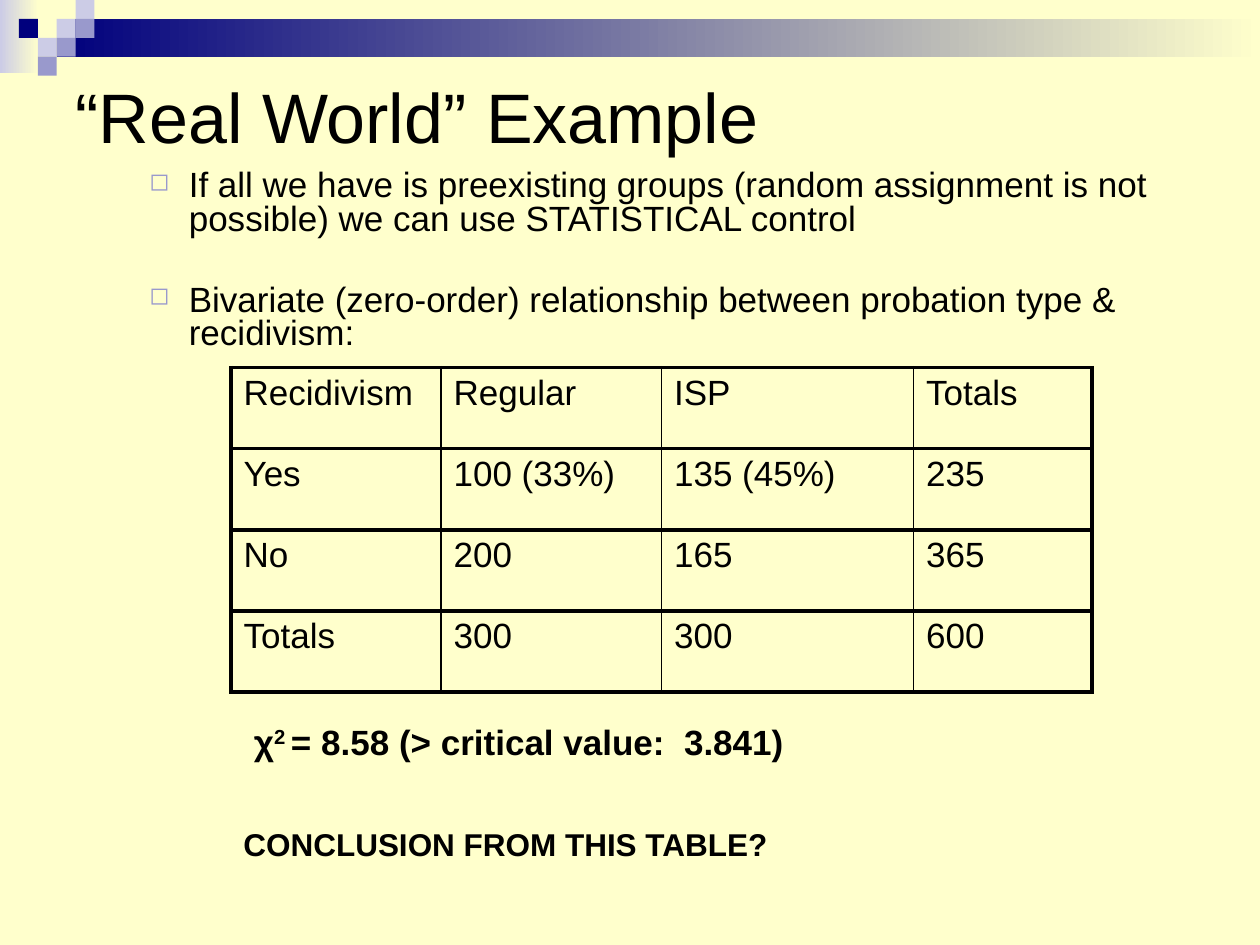
from lxml.etree import SubElement
from pptx import Presentation
from pptx.dml.color import RGBColor
from pptx.enum.shapes import MSO_SHAPE
from pptx.enum.text import MSO_ANCHOR, PP_ALIGN
from pptx.oxml.ns import qn
from pptx.util import Pt

CREAM = RGBColor(0xFF, 0xFF, 0xCC)
NAVY = RGBColor(0x00, 0x00, 0x7D)
LILAC = RGBColor(0xCC, 0xCC, 0xE6)
PURPLE = RGBColor(0x99, 0x99, 0xCC)
BLACK = RGBColor(0, 0, 0)

UNIT = 10.8  # side of one decorative square
SQUARES = [(3, 1, LILAC), (4, 0, LILAC), (4, 1, PURPLE), (2, 2, LILAC),
           (1, 1, NAVY), (3, 2, PURPLE), (2, 3, PURPLE)]
BULLETS = [
    "If all we have is preexisting groups (random assignment is not possible) "
    "we can use STATISTICAL control",
    "Bivariate (zero-order) relationship between probation type & recidivism:",
]
ROWS = [
    ["Recidivism", "Regular", "ISP", "Totals"],
    ["Yes", "100 (33%)", "135 (45%)", "235"],
    ["No", "200", "165", "365"],
    ["Totals", "300", "300", "600"],
]


def add_run(p, text, size=20, bold=False, baseline=0):
    r = p.add_run()
    r.text = text
    r.font.name = "Arial"
    r.font.size = Pt(size)
    r.font.bold = bold
    r.font.color.rgb = BLACK
    if baseline:
        r.font._element.set("baseline", str(baseline * 1000))


def add_bullet(p):
    """Give the paragraph a hanging, small purple square."""
    pPr = p._p.get_or_add_pPr()
    pPr.set("marL", str(Pt(59)))
    pPr.set("indent", str(Pt(-22.5)))
    color = SubElement(pPr, qn("a:buClr"))
    SubElement(color, qn("a:srgbClr"), val=str(PURPLE))
    SubElement(pPr, qn("a:buSzPct"), val="70000")
    SubElement(pPr, qn("a:buChar"), char="◻")


def add_borders(cell, **widths):
    tcPr = cell._tc.get_or_add_tcPr()
    for side, width in widths.items():
        ln = SubElement(tcPr, qn(f"a:ln{side}"), w=str(Pt(width)))
        fill = SubElement(ln, qn("a:solidFill"))
        SubElement(fill, qn("a:srgbClr"), val=str(BLACK))


class Deck:
    def __init__(self, prs):
        self.s = prs.slides.add_slide(prs.slide_layouts[5])
        self.s.background.fill.solid()
        self.s.background.fill.fore_color.rgb = CREAM

    def rect(self, x, y, w, h, color, fade_to=None):
        sp = self.s.shapes.add_shape(MSO_SHAPE.RECTANGLE, Pt(x), Pt(y), Pt(w), Pt(h))
        sp.shadow.inherit = False
        sp.line.fill.background()
        if fade_to is None:
            sp.fill.solid()
            sp.fill.fore_color.rgb = color
            return
        sp.fill.gradient()
        sp.fill.gradient_angle = 0
        for stop, stop_color in zip(sp.fill.gradient_stops, (color, fade_to)):
            stop.color.rgb = stop_color

    def title(self, text, x, y, w, h):
        sp = self.s.shapes.title
        sp.left, sp.top, sp.width, sp.height = Pt(x), Pt(y), Pt(w), Pt(h)
        tf = sp.text_frame
        tf.vertical_anchor = MSO_ANCHOR.MIDDLE
        tf.paragraphs[0].alignment = PP_ALIGN.LEFT
        add_run(tf.paragraphs[0], text, size=40)

    def text_box(self, x, y, w, h, wrap=True):
        tf = self.s.shapes.add_textbox(Pt(x), Pt(y), Pt(w), Pt(h)).text_frame
        tf.word_wrap = wrap
        return tf

    def bullets(self, items, x, y, w, h):
        tf = self.text_box(x, y, w, h)
        for i, item in enumerate(items):
            p = tf.paragraphs[0] if i == 0 else tf.add_paragraph()
            p.line_spacing = 0.8
            p.space_before = Pt(27 if i else 0)
            add_bullet(p)
            add_run(p, item)

    def table(self, rows, x, y, col_widths, row_height):
        table = self.s.shapes.add_table(
            len(rows), len(col_widths), Pt(x), Pt(y),
            Pt(sum(col_widths)), Pt(row_height * len(rows))).table
        table.first_row = table.horz_banding = False
        for col, width in zip(table.columns, col_widths):
            col.width = Pt(width)
        last = len(col_widths) - 1
        for i, values in enumerate(rows):
            table.rows[i].height = Pt(row_height)
            for j, value in enumerate(values):
                cell = table.cell(i, j)
                add_borders(cell, L=2.25 if j == 0 else 1,
                            R=2.25 if j == last else 1, T=2.25, B=2.25)
                cell.fill.background()
                add_run(cell.text_frame.paragraphs[0], value)


def main():
    prs = Presentation()
    prs.slide_width, prs.slide_height = Pt(720), Pt(540)
    deck = Deck(prs)

    deck.rect(0, 0, 22.3, 41.8, LILAC, fade_to=CREAM)
    deck.rect(3 * UNIT, UNIT, 720 - 3 * UNIT, 2 * UNIT, NAVY, fade_to=CREAM)
    for col, row, color in SQUARES:
        deck.rect(col * UNIT, row * UNIT, UNIT, UNIT, color)

    deck.title("“Real World” Example", 36, 36, 648, 60.5)
    deck.bullets(BULLETS, 41.8, 94, 630, 110)
    deck.table(ROWS, 132, 210, [120, 126, 144, 102], 46.4)

    p = deck.text_box(138, 408, 416, 31).paragraphs[0]
    add_run(p, "χ", bold=True)
    add_run(p, "2 ", bold=True, baseline=30)
    add_run(p, "= 8.58 (> critical value:  3.841)", bold=True)

    p = deck.text_box(132, 468, 322, 29, wrap=False).paragraphs[0]
    add_run(p, "CONCLUSION FROM THIS TABLE?", size=18, bold=True)

    prs.save("out.pptx")


if __name__ == "__main__":
    main()
